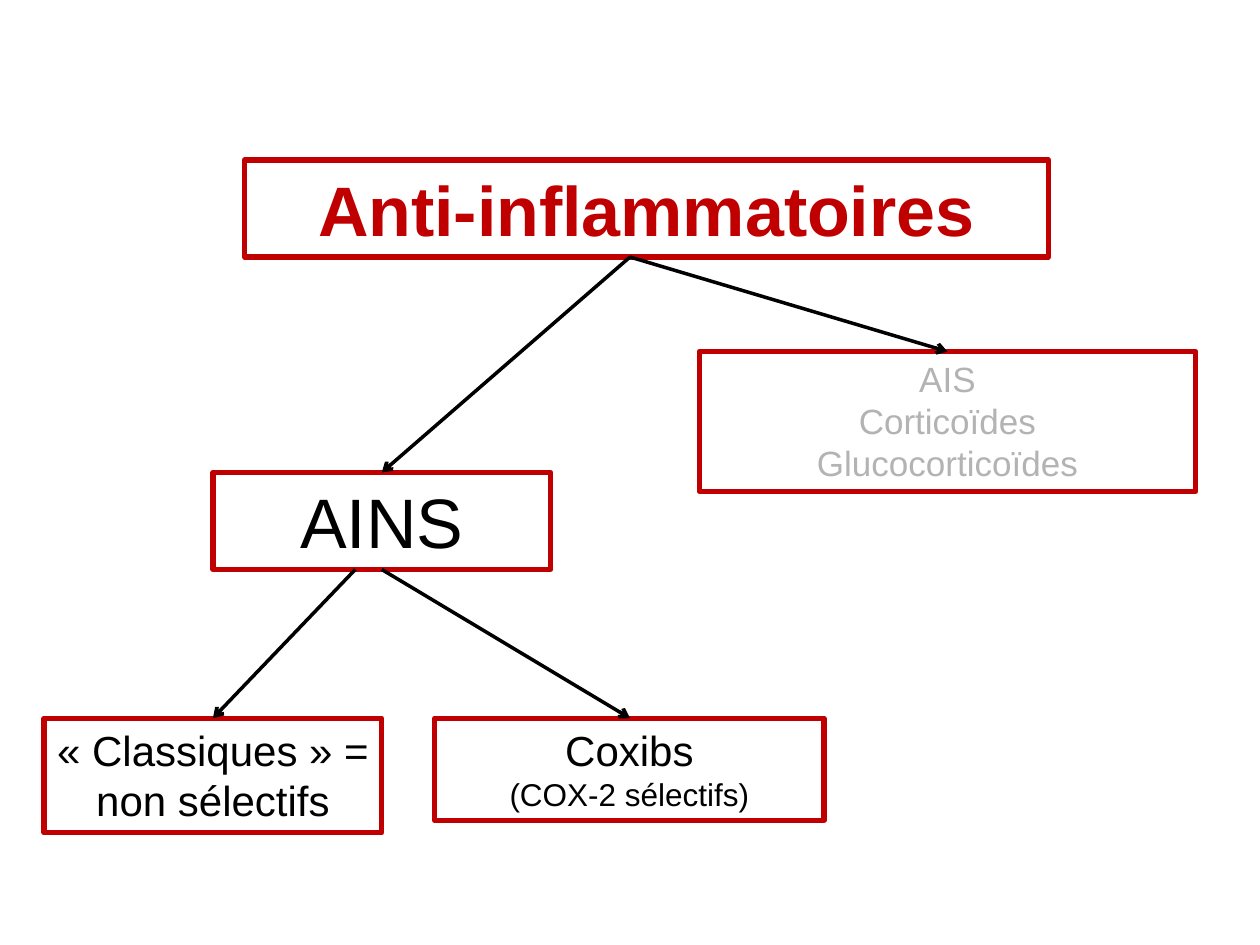
from lxml import etree
from pptx import Presentation
from pptx.dml.color import RGBColor
from pptx.enum.shapes import MSO_CONNECTOR
from pptx.enum.text import MSO_AUTO_SIZE, PP_ALIGN
from pptx.oxml.ns import qn
from pptx.util import Inches, Pt

STRAIGHT = MSO_CONNECTOR.STRAIGHT
CENTER = PP_ALIGN.CENTER
GROW = MSO_AUTO_SIZE.SHAPE_TO_FIT_TEXT

FONT = "Arial"
RED = "C00000"
BLACK = "000000"
GREY = "B3B3B3"


def color(hex_string):
    return RGBColor.from_string(hex_string)


def style_line(line, hex_string, width):
    line.color.rgb = color(hex_string)
    line.width = Pt(width)


def add_box(slide, place, lines, text_color=BLACK, bold=False):
    box = slide.shapes.add_textbox(*map(Inches, place))
    style_line(box.line, RED, 3)
    frame = box.text_frame
    frame.word_wrap = True
    frame.auto_size = GROW
    frame.text = "\n".join(text for text, size in lines)
    for paragraph, (text, size) in zip(frame.paragraphs, lines):
        paragraph.alignment = CENTER
        font = paragraph.runs[0].font
        font.name = FONT
        font.size = Pt(size)
        font.bold = bold
        font.color.rgb = color(text_color)


def add_arrow(slide, start, end):
    arrow = slide.shapes.add_connector(STRAIGHT, *map(Inches, start + end))
    style_line(arrow.line, BLACK, 2)
    outline = arrow.line._get_or_add_ln()
    etree.SubElement(outline, qn("a:tailEnd"), type="arrow")
    etree.SubElement(arrow._element.spPr, qn("a:effectLst"))


def main():
    presentation = Presentation()
    presentation.slide_width = Inches(10)
    presentation.slide_height = Inches(7.5)
    slide = presentation.slides.add_slide(presentation.slide_layouts[6])

    add_box(slide, (1.94, 1.27, 6.38, 0.77), [("Anti-inflammatoires", 40)], RED, True)
    add_box(slide, (1.69, 3.75, 2.68, 0.77), [("AINS", 40)])
    steroids = [(name, 20) for name in ("AIS", "Corticoïdes", "Glucocorticoïdes")]
    add_box(slide, (5.55, 2.79, 3.94, 1.11), steroids, GREY)
    add_box(slide, (0.35, 5.7, 2.68, 0.91), [("« Classiques » = non sélectifs", 24)])
    add_box(slide, (3.45, 5.7, 3.09, 0.81), [("Coxibs", 24), ("(COX-2 sélectifs)", 18)])

    root_bottom = (5, 2.04)
    ains_top = (3.03, 3.75)
    ains_bottom = (3.03, 4.52)
    add_arrow(slide, root_bottom, ains_top)
    add_arrow(slide, root_bottom, (7.52, 2.79))
    add_arrow(slide, (2.82, 4.52), (1.69, 5.7))
    add_arrow(slide, ains_bottom, (5, 5.7))

    presentation.save("out.pptx")


if __name__ == "__main__":
    main()
